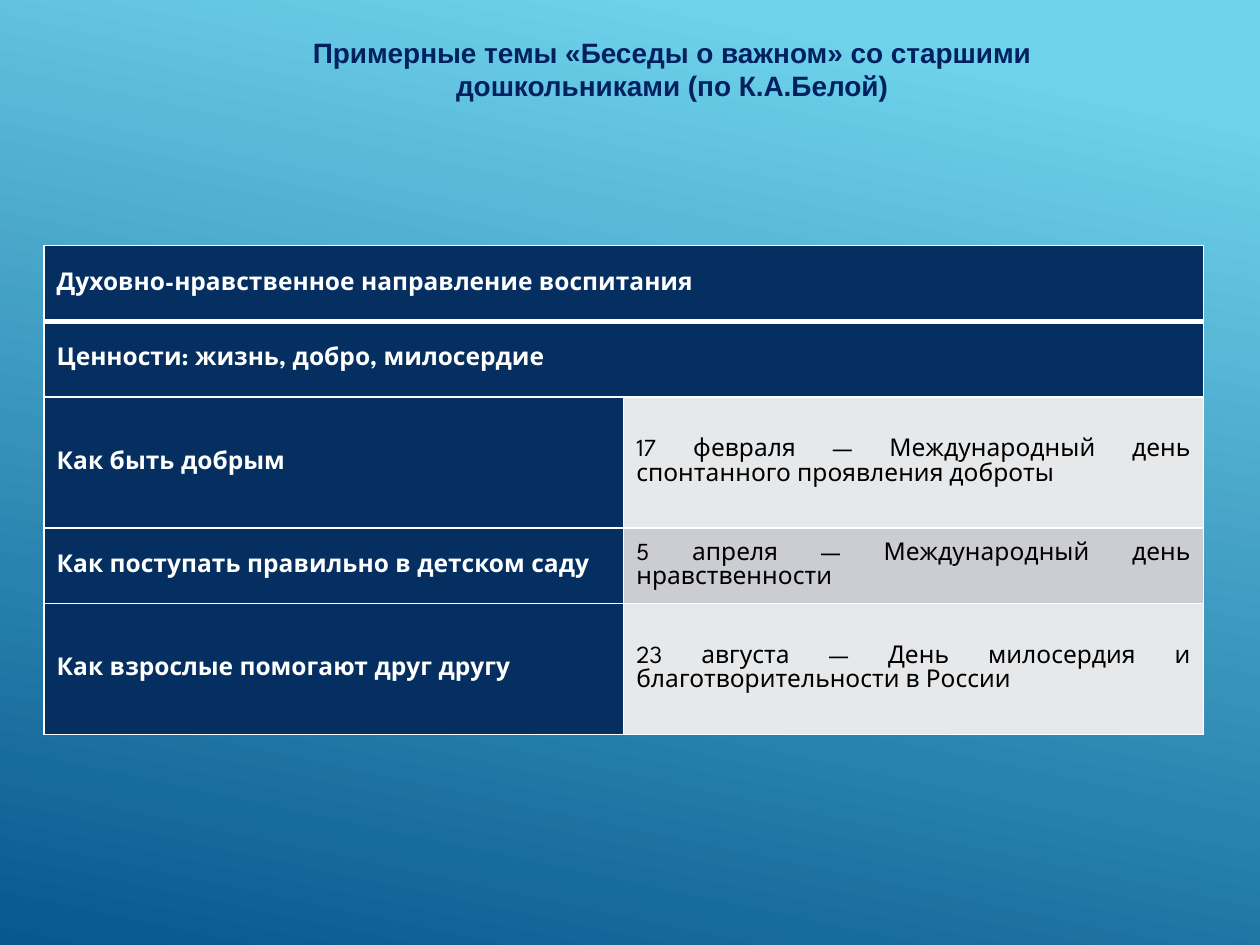
from lxml.etree import SubElement
from pptx import Presentation
from pptx.dml.color import RGBColor
from pptx.enum.text import MSO_ANCHOR, MSO_AUTO_SIZE, PP_ALIGN
from pptx.oxml.ns import qn
from pptx.util import Inches, Pt

# Content: one entry fills a whole row, two entries fill both columns
TITLE = "Примерные темы «Беседы о важном» со старшими дошкольниками (по К.А.Белой)"
ROWS = [
    ("Духовно-нравственное направление воспитания",),
    ("Ценности: жизнь, добро, милосердие",),
    ("Как быть добрым",
     "17 февраля — Международный день спонтанного проявления доброты"),
    ("Как поступать правильно в детском саду",
     "5 апреля — Международный день нравственности"),
    ("Как взрослые помогают друг другу",
     "23 августа — День милосердия и благотворительности в России"),
]
SHORT, TALL = 0.6, 1.04
ROW_HEIGHTS = [SHORT, SHORT, TALL, SHORT, TALL]
COLUMN_WIDTH = 4.6

NAVY = RGBColor(0x05, 0x2F, 0x61)
TITLE_BLUE = RGBColor(0x00, 0x20, 0x60)
WHITE = RGBColor(0xFF, 0xFF, 0xFF)
BLACK = RGBColor(0x00, 0x00, 0x00)
BANDS = [RGBColor(0xE7, 0xE8, 0xEA), RGBColor(0xCC, 0xCD, 0xD2)]
SKY = RGBColor(0x6E, 0xD2, 0xEB)
DEEP = RGBColor(0x06, 0x58, 0x8E)


def add_span(para, text, font, size, color, bold):
    span = para.add_run()
    span.text = text
    span.font.name = font
    span.font.size = Pt(size)
    span.font.color.rgb = color
    span.font.bold = bold


def set_borders(cell, widths):
    """Draw white borders; widths maps each side to its points."""
    properties = cell._tc.get_or_add_tcPr()
    for side, width in widths.items():
        line = SubElement(properties, qn(f"a:ln{side}"), w=str(Pt(width)))
        fill = SubElement(line, qn("a:solidFill"))
        SubElement(fill, qn("a:srgbClr"), val=str(WHITE))


def fill_cell(cell, text, fill, color, bold):
    cell.fill.solid()
    cell.fill.fore_color.rgb = fill
    cell.vertical_anchor = MSO_ANCHOR.MIDDLE
    para = cell.text_frame.paragraphs[0]
    para.alignment = PP_ALIGN.JUSTIFY
    para.line_spacing = 1.07
    para.space_after = Pt(8)
    add_span(para, text, "League Spartan", 14, color, bold)


def add_background(page):
    fill = page.background.fill
    fill.gradient()
    fill.gradient_angle = 258
    for stop, color, position in zip(fill.gradient_stops, (SKY, DEEP), (0.1, 1)):
        stop.color.rgb = color
        stop.position = position


def add_title(page):
    box = page.shapes.title
    box.left, box.top = Inches(1.83), Inches(0.25)
    box.width, box.height = Inches(7.01), Inches(0.57)
    frame = box.text_frame
    frame.margin_left = frame.margin_right = frame.margin_bottom = 0
    frame.margin_top = Inches(0.03)
    frame.vertical_anchor = MSO_ANCHOR.TOP
    frame.word_wrap = True
    frame.auto_size = MSO_AUTO_SIZE.SHAPE_TO_FIT_TEXT
    para = frame.paragraphs[0]
    para.alignment = PP_ALIGN.CENTER
    para.space_before = Pt(2)
    add_span(para, TITLE, "Arial", 16, TITLE_BLUE, True)


def add_topics(page):
    table = page.shapes.add_table(
        len(ROWS), 2, Inches(0.35), Inches(1.95),
        Inches(2 * COLUMN_WIDTH), Inches(sum(ROW_HEIGHTS))).table
    for column in table.columns:
        column.width = Inches(COLUMN_WIDTH)
    for index, (texts, height) in enumerate(zip(ROWS, ROW_HEIGHTS)):
        table.rows[index].height = Inches(height)
        # A thick line separates the heading row from the rest
        widths = {"L": 1, "R": 1, "T": 3 if index == 1 else 1,
                  "B": 3 if index == 0 else 1}
        topic, date = table.cell(index, 0), table.cell(index, 1)
        for cell in (topic, date):
            set_borders(cell, widths)
        fill_cell(topic, texts[0], NAVY, WHITE, True)
        if len(texts) == 1:
            topic.merge(date)
        else:
            fill_cell(date, texts[1], BANDS[index % 2], BLACK, False)


def main():
    deck = Presentation()
    deck.slide_width, deck.slide_height = Inches(10), Inches(7.5)
    page = deck.slides.add_slide(deck.slide_layouts[5])
    add_background(page)
    add_title(page)
    add_topics(page)
    deck.save("out.pptx")


if __name__ == "__main__":
    main()
